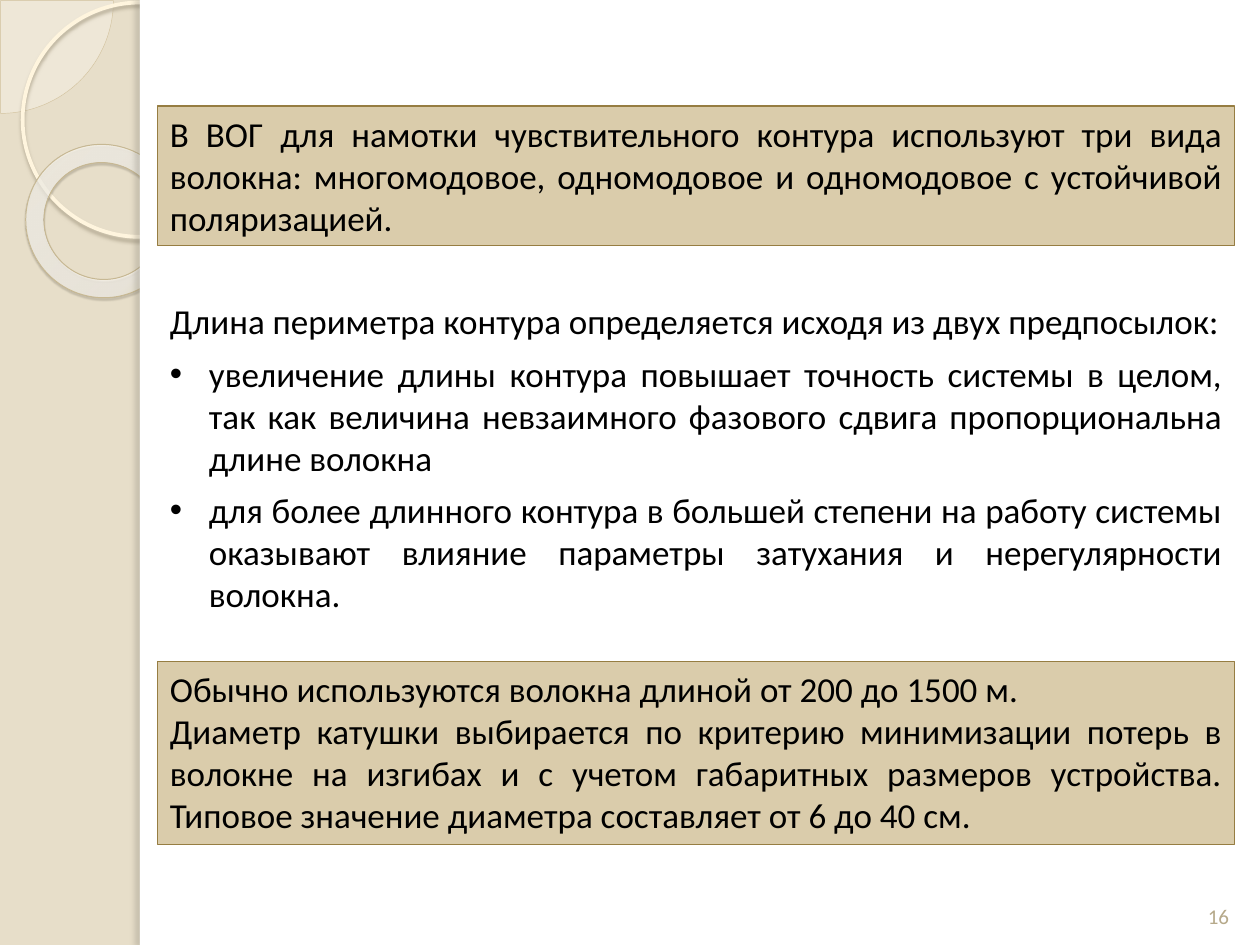
from dataclasses import dataclass

from lxml import etree
from pptx import Presentation
from pptx.dml.color import RGBColor
from pptx.enum.shapes import MSO_SHAPE as Shape
from pptx.enum.text import MSO_ANCHOR as Anchor, PP_ALIGN as Align
from pptx.oxml import parse_xml
from pptx.oxml.ns import nsdecls, qn
from pptx.util import Emu, Inches, Pt


@dataclass(frozen=True)
class Theme:
    font: str = "Calibri"
    body_size: int = 20
    number_size: int = 12
    sand: str = "E7DEC9"
    panel: str = "FFFFFF"
    callout: str = "DACCAB"
    callout_line: str = "967D42"
    text: str = "000000"
    number: str = "B6A98A"
    pie: str = "FEFAF4"
    pie_line: str = "D3C39F"
    ring_line: str = "FFF5DE"
    donut_line: str = "C7B893"
    donut_stops: tuple = ((0, "FFFCF6", 70), (70, "FFFEFB", 55), (100, "F0D28E", 60))
    ring_shadow: tuple = ("B0A68F", 85, 2, 2, 90)
    donut_shadow: tuple = ("5A5444", 35, 1, 1.2, 75)
    panel_shadow: tuple = ("736F63", 25, 3, 3, 180)


class Builder:
    def __init__(self, page, theme):
        self.page = page
        self.theme = theme
        page.background.fill.solid()
        page.background.fill.fore_color.rgb = RGBColor.from_string(theme.sand)

    def shape(self, kind, place, fill=None, line=None, width=0, shadow=None):
        item = self.page.shapes.add_shape(kind, *map(Inches, place))
        item.shadow.inherit = False
        if fill:
            item.fill.solid()
            item.fill.fore_color.rgb = RGBColor.from_string(fill)
        else:
            item.fill.background()
        if line:
            item.line.color.rgb = RGBColor.from_string(line)
            item.line.width = Pt(width)
        else:
            item.line.fill.background()
        if shadow:
            self.cast_shadow(item, *shadow)
        return item

    def cast_shadow(self, item, color, alpha, blur, distance, angle):
        effects = item._element.spPr.find(qn("a:effectLst"))
        effects.append(parse_xml(
            f'<a:outerShdw {nsdecls("a")} blurRad="{Pt(blur)}" dist="{Pt(distance)}" '
            f'dir="{angle * 60000}" algn="tl" rotWithShape="0">'
            f'<a:srgbClr val="{color}"><a:alpha val="{alpha * 1000}"/></a:srgbClr>'
            '</a:outerShdw>'))

    def fade(self, item, alpha):
        color = item._element.spPr.find(qn("a:solidFill"))[0]
        etree.SubElement(color, qn("a:alpha"), val=str(alpha * 1000))

    def radial_fill(self, item, stops):
        marks = "".join(
            f'<a:gs pos="{pos * 1000}"><a:srgbClr val="{color}">'
            f'<a:alpha val="{alpha * 1000}"/></a:srgbClr></a:gs>'
            for pos, color, alpha in stops)
        gradient = parse_xml(
            f'<a:gradFill {nsdecls("a")} rotWithShape="1"><a:gsLst>{marks}</a:gsLst>'
            '<a:path path="circle"><a:fillToRect l="-408000" t="-50000" '
            'r="508000" b="150000"/></a:path></a:gradFill>')
        props = item._element.spPr
        props.replace(props.find(qn("a:noFill")), gradient)

    def add_lines(self, frame, lines, align=Align.JUSTIFY, size=None, color=None,
                  after=0, bullets_from=None):
        frame.word_wrap = True
        for index, line in enumerate(lines):
            para = frame.paragraphs[0] if index == 0 else frame.add_paragraph()
            para.alignment = align
            para.space_after = Pt(after)
            span = para.add_run()
            span.text = line
            span.font.name = self.theme.font
            span.font.size = Pt(size or self.theme.body_size)
            span.font.color.rgb = RGBColor.from_string(color or self.theme.text)
            if bullets_from is not None and index >= bullets_from:
                self.bullet(para)

    def bullet(self, para):
        props = para._p.get_or_add_pPr()
        indent = Inches(0.31)
        props.set("marL", str(indent))
        props.set("indent", str(Emu(-indent)))
        etree.SubElement(props, qn("a:buFont"), typeface="Arial")
        etree.SubElement(props, qn("a:buChar"), char="•")

    def text(self, place, lines, anchor=Anchor.TOP, **style):
        box = self.page.shapes.add_textbox(*map(Inches, place))
        box.text_frame.vertical_anchor = anchor
        self.add_lines(box.text_frame, lines, **style)

    def callout(self, place, lines):
        box = self.shape(Shape.RECTANGLE, place, self.theme.callout,
                         self.theme.callout_line, 0.75)
        box.text_frame.vertical_anchor = Anchor.TOP
        self.add_lines(box.text_frame, lines)

    def ornament(self):
        theme = self.theme
        pie = self.shape(Shape.PIE, (-0.89, -0.89, 1.79, 1.79),
                         theme.pie, theme.pie_line, 0.25)
        pie.adjustments[0] = 0
        pie.adjustments[1] = 54
        self.fade(pie, 33)
        self.shape(Shape.OVAL, (0.18, 0.02, 1.86, 1.86), line=theme.ring_line,
                   width=2.15, shadow=theme.ring_shadow)
        donut = self.shape(Shape.DONUT, (0.2, 1.15, 1.23, 1.21), line=theme.donut_line,
                           width=0.58, shadow=theme.donut_shadow)
        donut.adjustments[0] = 0.12
        donut.rotation = 38.6
        self.radial_fill(donut, theme.donut_stops)
        self.shape(Shape.RECTANGLE, (1.11, 0, 8.89, 7.5), theme.panel)
        self.shape(Shape.RECTANGLE, (1.11, 0, 0.08, 7.5), theme.panel,
                   shadow=theme.panel_shadow)


def main():
    deck = Presentation()
    deck.slide_width, deck.slide_height = Inches(10), Inches(7.5)
    theme = Theme()
    builder = Builder(deck.slides.add_slide(deck.slide_layouts[6]), theme)
    left, width = 1.25, 8.55

    builder.ornament()
    builder.text((9.42, 6.9, 0.5, 0.52), ["16"], anchor=Anchor.BOTTOM,
                 align=Align.CENTER, size=theme.number_size, color=theme.number)
    builder.callout((left, 0.84, width, 1.11), [
        "В ВОГ для намотки чувствительного контура используют три вида волокна: "
        "многомодовое, одномодовое и одномодовое с устойчивой поляризацией."])
    builder.text((left, 2.33, width, 2.63), [
        "Длина периметра контура определяется исходя из двух предпосылок:",
        "увеличение длины контура повышает точность системы в целом, так как "
        "величина невзаимного фазового сдвига пропорциональна длине волокна",
        "для более длинного контура в большей степени на работу системы "
        "оказывают влияние параметры затухания и нерегулярности волокна.",
    ], after=6, bullets_from=1)
    builder.callout((left, 5.25, width, 1.45), [
        "Обычно используются волокна длиной от 200 до 1500 м.",
        "Диаметр катушки выбирается по критерию минимизации потерь в волокне "
        "на изгибах и с учетом габаритных размеров устройства. Типовое значение "
        "диаметра составляет от 6 до 40 см."])
    deck.save("out.pptx")


if __name__ == "__main__":
    main()
